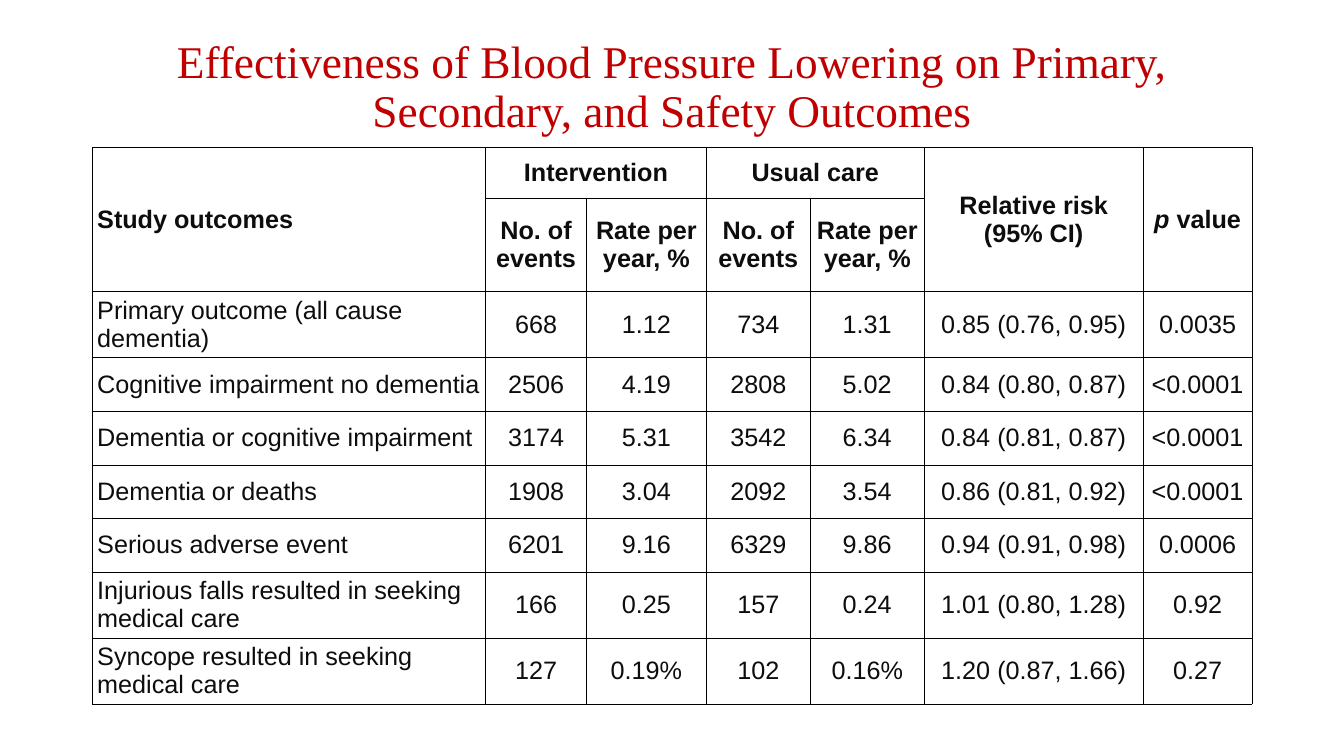
from dataclasses import dataclass

from lxml.etree import fromstring
from pptx import Presentation
from pptx.dml.color import RGBColor
from pptx.enum.text import MSO_ANCHOR, MSO_AUTO_SIZE, PP_ALIGN
from pptx.oxml.ns import nsdecls
from pptx.util import Cm, Pt


@dataclass(frozen=True)
class Theme:
    title_font: str = "Times New Roman"
    body_font: str = "Arial"
    title_size: float = 32.4
    body_size: float = 18
    title: str = "C00000"
    text: str = "0D0D0D"
    border: str = "000000"


theme = Theme()


def add_run(p, text, font, size, color, bold=False, italic=False):
    r = p.add_run()
    r.text = text
    r.font.name, r.font.size = font, Pt(size)
    r.font.color.rgb = RGBColor.from_string(color)
    r.font.bold, r.font.italic = bold, italic


def write_cell(cell, lines, align, bold=False):
    """Fill a cell with one paragraph per line; a line is a list of runs, (text, italic)."""
    tf = cell.text_frame
    for i, line in enumerate(lines):
        p = tf.add_paragraph() if i else tf.paragraphs[0]
        p.alignment = align
        for text, italic in line:
            add_run(p, text, theme.body_font, theme.body_size, theme.text, bold, italic)


prs = Presentation()
prs.slide_width, prs.slide_height = Cm(33.87), Cm(19.05)
s = prs.slides.add_slide(prs.slide_layouts[5])

# Title
title = s.shapes.title
title.left, title.top, title.width, title.height = Cm(2.33), Cm(0.81), Cm(29.21), Cm(2.84)
tf = title.text_frame
tf.word_wrap, tf.auto_size = True, MSO_AUTO_SIZE.NONE
tf.vertical_anchor = MSO_ANCHOR.MIDDLE
p = tf.paragraphs[0]
p.alignment, p.line_spacing = PP_ALIGN.CENTER, 0.9
add_run(p, "Effectiveness of Blood Pressure Lowering on Primary, Secondary, and Safety Outcomes",
        theme.title_font, theme.title_size, theme.title)

# Table content
outcomes = [
    ("Primary outcome (all cause dementia)", "668", "1.12", "734", "1.31", "0.85 (0.76, 0.95)", "0.0035"),
    ("Cognitive impairment no dementia", "2506", "4.19", "2808", "5.02", "0.84 (0.80, 0.87)", "<0.0001"),
    ("Dementia or cognitive impairment", "3174", "5.31", "3542", "6.34", "0.84 (0.81, 0.87)", "<0.0001"),
    ("Dementia or deaths", "1908", "3.04", "2092", "3.54", "0.86 (0.81, 0.92)", "<0.0001"),
    ("Serious adverse event", "6201", "9.16", "6329", "9.86", "0.94 (0.91, 0.98)", "0.0006"),
    ("Injurious falls resulted in seeking medical care", "166", "0.25", "157", "0.24", "1.01 (0.80, 1.28)", "0.92"),
    ("Syncope resulted in seeking medical care", "127", "0.19%", "102", "0.16%", "1.20 (0.87, 1.66)", "0.27"),
]
# Row, column, last row and last column of the span, lines
headers = [
    (0, 0, 1, 0, [[("Study outcomes", False)]]),
    (0, 1, 0, 2, [[("Intervention", False)]]),
    (0, 3, 0, 4, [[("Usual care", False)]]),
    (0, 5, 1, 5, [[("Relative risk", False)], [("(95% CI)", False)]]),
    (0, 6, 1, 6, [[("p", True), (" value", False)]]),
]
for col in (1, 3):
    headers.append((1, col, 1, col, [[("No. of events", False)]]))
    headers.append((1, col + 1, 1, col + 1, [[("Rate per year, %", False)]]))

# Table grid
col_widths = [9.91, 2.54, 3.02, 2.62, 2.87, 5.52, 2.74]
row_heights = [1.27, 2.36] + [1.35] * len(outcomes)
table = s.shapes.add_table(len(row_heights), len(col_widths), Cm(2.33), Cm(3.72),
                           Cm(sum(col_widths)), Cm(sum(row_heights))).table
table.first_row = table.horz_banding = False
for column, width in zip(table.columns, col_widths):
    column.width = Cm(width)
for row, height in zip(table.rows, row_heights):
    row.height = Cm(height)

for cell in table.iter_cells():
    cell.fill.background()
    cell.vertical_anchor = MSO_ANCHOR.MIDDLE
    cell.margin_left = cell.margin_right = cell.margin_top = cell.margin_bottom = Cm(0.12)
    tc_pr = cell._tc.get_or_add_tcPr()
    for i, side in enumerate(("lnL", "lnR", "lnT", "lnB")):
        tc_pr.insert(i, fromstring(
            f'<a:{side} {nsdecls("a")} w="{Pt(0.5)}"><a:solidFill>'
            f'<a:srgbClr val="{theme.border}"/></a:solidFill></a:{side}>'))

# Header and body text
for row, col, last_row, last_col, lines in headers:
    cell = table.cell(row, col)
    if (row, col) != (last_row, last_col):
        cell.merge(table.cell(last_row, last_col))
    write_cell(cell, lines, PP_ALIGN.CENTER if col else PP_ALIGN.LEFT, bold=True)

for row, values in enumerate(outcomes, start=2):
    for col, value in enumerate(values):
        write_cell(table.cell(row, col), [[(value, False)]],
                   PP_ALIGN.CENTER if col else PP_ALIGN.LEFT)

prs.save("out.pptx")
